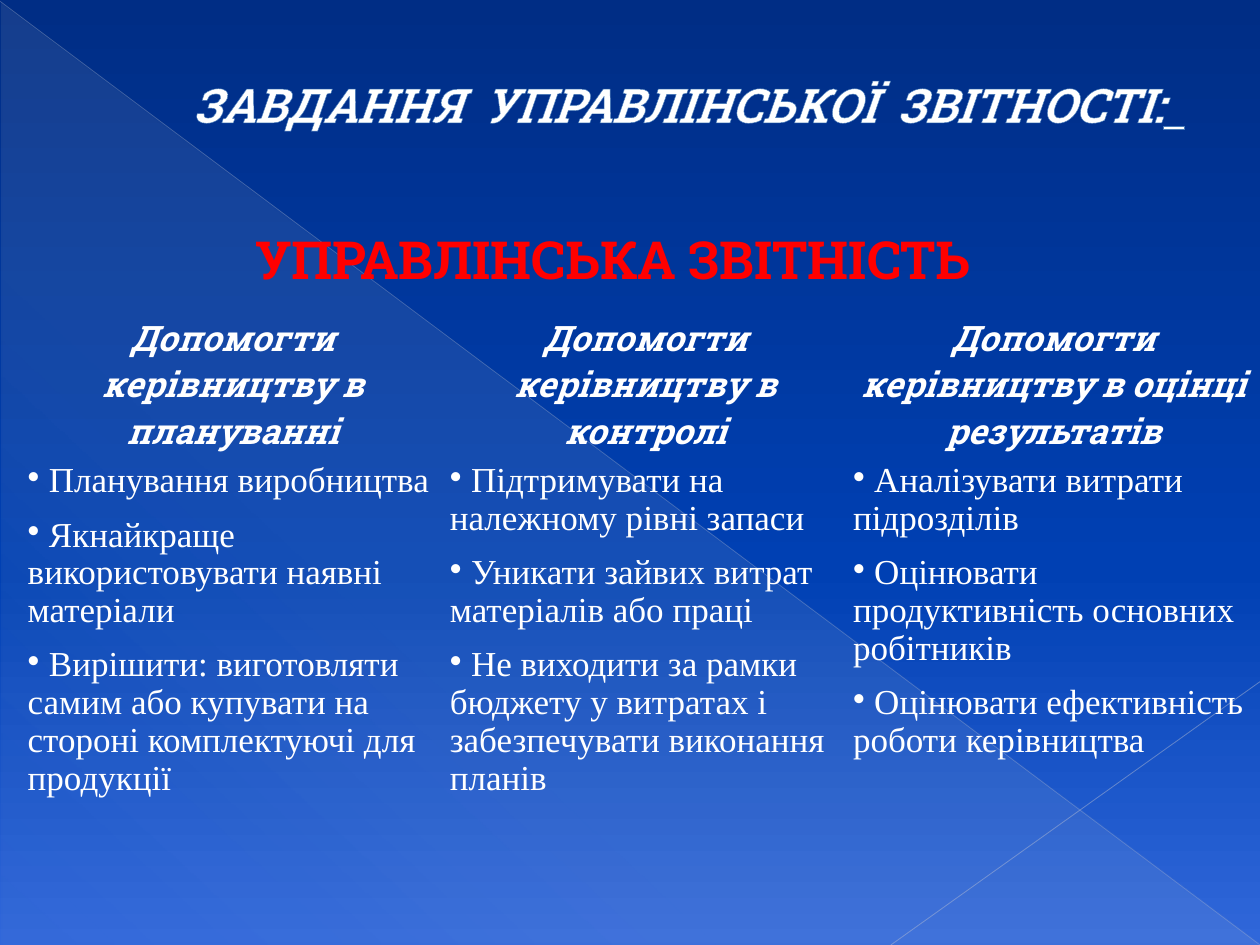
from copy import deepcopy

from lxml import etree
from pptx import Presentation
from pptx.dml.color import RGBColor
from pptx.enum import shapes, text
from pptx.oxml.ns import qn
from pptx.util import Inches, Pt

WHITE = RGBColor(0xFF, 0xFF, 0xFF)
RED = RGBColor(0xFF, 0, 0)
NAVY = RGBColor(0, 0x2D, 0x85)
BLUE = RGBColor(0, 0x40, 0xB3)
SKY = RGBColor(0x30, 0x67, 0xDA)
CREAM = RGBColor(0xEE, 0xEC, 0xE1)
MIST = RGBColor(0xAD, 0xB6, 0xCE)
HAZE = RGBColor(0xB6, 0xBE, 0xD3)
STEEL = RGBColor(0x46, 0x7A, 0xB8)
PLUM = RGBColor(0x5E, 0x45, 0x7C)

SLAB = "Roboto Slab"
TITLE = dict(name=SLAB, size=Pt(27), bold=True, italic=True)
BANNER = dict(name=SLAB, size=Pt(30), bold=True)
HEAD = dict(name=SLAB, size=Pt(20), bold=True, italic=True)
ITEM = dict(name="Times New Roman", size=Pt(20), bold=False, italic=False)
NO_GRID = "{2D5ABB26-0587-4C30-8999-92F81FD0307C}"

COLUMNS = [
    (3.35, "Допомогти керівництву в плануванні", [
        "Планування виробництва",
        "Якнайкраще використовувати наявні матеріали",
        "Вирішити: виготовляти самим або купувати на стороні "
        "комплектуючі для продукції"]),
    (3.2, "Допомогти керівництву в контролі", [
        "Підтримувати на належному рівні запаси",
        "Уникати зайвих витрат матеріалів або праці",
        "Не виходити за рамки бюджету у витратах і забезпечувати "
        "виконання планів"]),
    (3.28, "Допомогти керівництву в оцінці результатів", [
        "Аналізувати витрати підрозділів",
        "Оцінювати продуктивність основних робітників",
        "Оцінювати ефективність роботи керівництва"]),
]


def add(parent, tag, **attrs):
    node = etree.SubElement(parent, qn(tag))
    for key, value in attrs.items():
        node.set(key, str(value))
    return node


def add_color(parent, color, alpha=100):
    node = add(parent, "a:srgbClr", val=color)
    if alpha < 100:
        add(node, "a:alpha", val=alpha * 1000)


def grade(fill, root, angle, stops):
    """Fill with gradient stops of (position, colour, opacity)."""
    fill.gradient()
    grad = next(root.iter(qn("a:gradFill")))
    for child in list(grad):
        grad.remove(child)
    items = add(grad, "a:gsLst")
    for pos, color, alpha in stops:
        add_color(add(items, "a:gs", pos=pos * 1000), color, alpha)
    add(grad, "a:lin", ang=angle * 60000, scaled=0)


def write(par, words, style, color):
    run = par.add_run()
    run.text = words
    for key, value in style.items():
        setattr(run.font, key, value)
    run.font.color.rgb = color
    return run


def outline(run, color, width):
    props = run.font._element
    line = add(props, "a:ln", w=Pt(width))
    add_color(add(line, "a:solidFill"), color)
    props.insert(0, line)


def indent(par, left, first):
    props = par._p.get_or_add_pPr()
    props.set("marL", str(Inches(left)))
    props.set("indent", str(Inches(first)))


def place(shape, box):
    shape.left, shape.top, shape.width, shape.height = map(Inches, box)


def add_backdrop(slide, box):
    grade(slide.background.fill, slide._element, 90,
          [(0, NAVY, 100), (60, BLUE, 100), (100, SKY, 100)])
    # Pale corner
    corner = slide.shapes.add_shape(
        shapes.MSO_SHAPE.RIGHT_TRIANGLE, *map(Inches, box))
    corner.shadow.inherit = False
    corner.line.fill.background()
    grade(corner.fill, corner._element, 133,
          [(0, CREAM, 10), (70, CREAM, 8), (100, CREAM, 1)])
    # Thin diagonals
    left, top, width, height = box
    right, low = left + width, top + height
    for ends, color, thick, alpha in [
            ((0, 0.01, right, low), MIST, 0.39, 35),
            ((right, 5.41, 7.07, low), HAZE, 0.47, 45)]:
        line = slide.shapes.add_connector(
            shapes.MSO_CONNECTOR.STRAIGHT, *map(Inches, ends))
        line.line.width = Pt(thick)
        line.line.color.rgb = color
        tint = next(line._element.spPr.iter(qn("a:srgbClr")))
        add(tint, "a:alpha", val=alpha * 1000)
        add(line._element.spPr, "a:effectLst")


def add_title(slide, box):
    title = slide.shapes.title
    place(title, box)
    frame = title.text_frame
    frame.vertical_anchor = text.MSO_ANCHOR.MIDDLE
    frame.auto_size = text.MSO_AUTO_SIZE.NONE
    par = frame.paragraphs[0]
    par.alignment = text.PP_ALIGN.JUSTIFY
    indent(par, 0.53, 0.4)
    run = write(par, "ЗАВДАННЯ УПРАВЛІНСЬКОЇ ЗВІТНОСТІ:", TITLE, WHITE)
    tail = write(par, " ", dict(TITLE, underline=True), WHITE)
    for part in (run, tail):
        outline(part, STEEL, 0.83)
    # The break keeps the size of the title text
    par.add_line_break()
    par._p[-1].insert(0, deepcopy(tail.font._element))


def add_banner(slide, box):
    frame = slide.shapes.add_textbox(*map(Inches, box)).text_frame
    frame.word_wrap = True
    par = frame.paragraphs[0]
    par.alignment = text.PP_ALIGN.CENTER
    indent(par, 0.49, -0.42)
    outline(write(par, "УПРАВЛІНСЬКА ЗВІТНІСТЬ", BANNER, RED), PLUM, 0.71)


def add_tasks(slide, box):
    table = slide.shapes.add_table(
        2, len(COLUMNS), *map(Inches, box)).table
    table.first_row = table.horz_banding = False
    table._tbl.tblPr.find(qn("a:tableStyleId")).text = NO_GRID
    table.rows[0].height = Inches(1.17)
    table.rows[1].height = Inches(box[3] - 1.17)
    for col, (width, head, items) in enumerate(COLUMNS):
        table.columns[col].width = Inches(width)
        top, body = table.cell(0, col), table.cell(1, col)
        for cell in (top, body):
            cell.fill.background()
            cell.margin_left = cell.margin_right = Inches(0.05)
            cell.margin_top = cell.margin_bottom = 0
        # Heading
        par = top.text_frame.paragraphs[0]
        par.alignment = text.PP_ALIGN.CENTER
        write(par, head, HEAD, WHITE)
        # Bulleted tasks
        frame = body.text_frame
        for row, item in enumerate(items):
            par = frame.add_paragraph() if row else frame.paragraphs[0]
            par.line_spacing = 0.97
            par.space_before = Pt(9.6 if row else 0)
            indent(par, 0, 0)
            add(par._p.get_or_add_pPr(), "a:buChar", char="•")
            write(par, " " + item, ITEM, WHITE)


def main():
    deck = Presentation()
    deck.slide_width, deck.slide_height = Inches(10), Inches(7.5)
    slide = deck.slides.add_slide(deck.slide_layouts[5])
    add_backdrop(slide, (0.01, 0.02, 9.99, 7.48))
    add_title(slide, (0.5, 0.5, 9, 1.1))
    add_banner(slide, (1.25, 1.75, 7.17, 0.47))
    add_tasks(slide, (0.17, 2.5, 9.83, 4.17))
    # The title lies above the backdrop
    tree = slide.shapes._spTree
    tree.insert(5, slide.shapes.title._element)
    deck.save("out.pptx")


if __name__ == "__main__":
    main()
